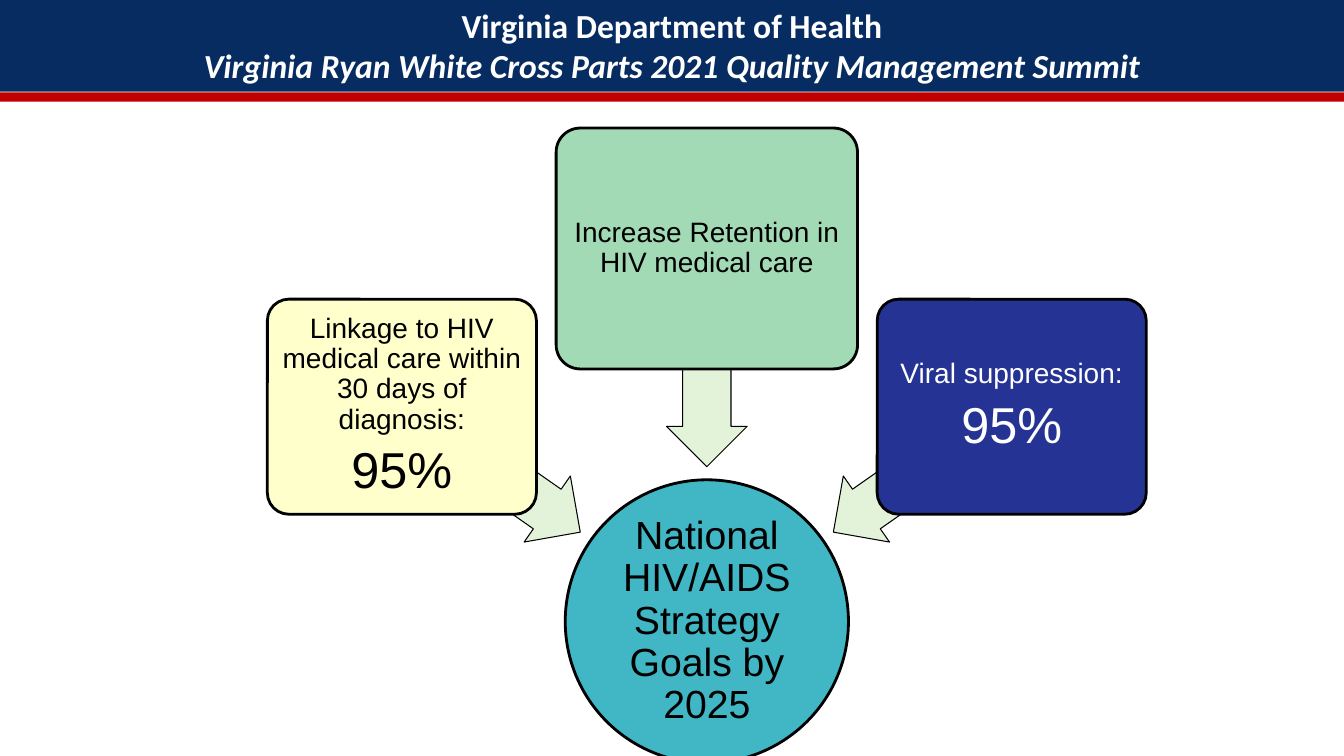
"""Build the slide on the national HIV/AIDS strategy goals."""
from dataclasses import dataclass

import lxml.etree
import pptx
import pptx.dml.color
import pptx.enum.shapes
import pptx.enum.text
import pptx.oxml.ns
import pptx.util

Pt = pptx.util.Pt
Kind = pptx.enum.shapes.MSO_SHAPE
Align = pptx.enum.text.PP_ALIGN
Anchor = pptx.enum.text.MSO_ANCHOR

COLORS = {
    "navy": "072C62", "red": "C00000", "teal": "41B6C4", "cream": "FFFFCC",
    "mint": "A1DAB4", "blue": "253494", "leaf": "C7E9B4",
    "black": "000000", "white": "FFFFFF",
}
SLIDE_WIDTH, SLIDE_HEIGHT = 960, 540
CENTER = 504.9
BOX_OFFSET, BOX_Y = 217.8, 290.5
ARROW_OFFSET, ARROW_Y = 154.1, 335.5
HEADER = ("Virginia Department of Health",
          "Virginia Ryan White Cross Parts 2021 Quality Management Summit")


@dataclass
class Line:
    """One paragraph of a label."""
    text: str
    size: float


@dataclass
class Node:
    """A filled shape with a label, placed by its center."""
    kind: Kind
    x: float
    y: float
    width: float
    height: float
    fill: str
    ink: str
    inset: float
    lines: list[Line]


@dataclass
class Arrow:
    """A rotated block arrow, placed by its center."""
    x: float
    y: float
    rotation: float


CIRCLE = Node(Kind.OVAL, CENTER, 443.9, 202.3, 202.3, "teal", "black", 1.5,
              [Line("National HIV/AIDS Strategy Goals by 2025", 28)])
GOALS = [
    (Arrow(CENTER - ARROW_OFFSET, ARROW_Y, 215),
     Node(Kind.ROUNDED_RECTANGLE, CENTER - BOX_OFFSET, BOX_Y, 192.2, 153.6,
          "cream", "black", 3,
          [Line("Linkage to HIV medical care within 30 days of diagnosis:", 20),
           Line("95%", 36)])),
    (Arrow(CENTER, 255.6, 270),
     Node(Kind.ROUNDED_RECTANGLE, CENTER, 177.5, 215.3, 172.1,
          "mint", "black", 3,
          [Line("Increase Retention in HIV medical care", 20)])),
    (Arrow(CENTER + ARROW_OFFSET, ARROW_Y, 325),
     Node(Kind.ROUNDED_RECTANGLE, CENTER + BOX_OFFSET, BOX_Y, 192.2, 153.6,
          "blue", "white", 3,
          [Line("Viral suppression:", 20), Line("95%", 36)])),
]


def color(name: str) -> pptx.dml.color.RGBColor:
    """Return a named color."""
    return pptx.dml.color.RGBColor.from_string(COLORS[name])


def add_block(page, kind, x, y, width, height, fill, line_width=0):
    """Add a filled shape around a center and return it."""
    block = page.shapes.add_shape(kind, Pt(x - width / 2), Pt(y - height / 2),
                                  Pt(width), Pt(height))
    block.shadow.inherit = False
    block.fill.solid()
    block.fill.fore_color.rgb = color(fill)
    if line_width:
        block.line.color.rgb = color("black")
        block.line.width = Pt(line_width)
    else:
        block.line.fill.background()
    return block


def add_node(page, node: Node) -> None:
    """Draw a node with its label."""
    box = add_block(page, node.kind, node.x, node.y, node.width, node.height,
                    node.fill, 2)
    if node.kind == Kind.ROUNDED_RECTANGLE:
        box.adjustments[0] = 0.1
    frame = box.text_frame
    frame.word_wrap = True
    frame.vertical_anchor = Anchor.MIDDLE
    frame.margin_left = frame.margin_right = Pt(node.inset)
    frame.margin_top = frame.margin_bottom = Pt(node.inset)
    for index, line in enumerate(node.lines):
        para = frame.add_paragraph() if index else frame.paragraphs[0]
        para.text = line.text
        para.alignment = Align.CENTER
        para.line_spacing = 0.9
        if index < len(node.lines) - 1:
            para.space_after = Pt(0.35 * line.size)
        para.font.name = "Arial"
        para.font.size = Pt(line.size)
        para.font.color.rgb = color(node.ink)


def add_arrow(page, arrow: Arrow) -> None:
    """Draw a half-transparent block arrow."""
    block = add_block(page, Kind.LEFT_ARROW, arrow.x, arrow.y, 155.5, 57.6,
                      "leaf", 0.75)
    block.rotation = arrow.rotation
    block.adjustments[0] = 0.6
    block.adjustments[1] = 0.5
    tint = block.fill._xPr.find(".//" + pptx.oxml.ns.qn("a:srgbClr"))
    lxml.etree.SubElement(tint, pptx.oxml.ns.qn("a:alpha"), val="50000")


def format_header(title) -> None:
    """Turn the title placeholder into the banner."""
    title.left, title.top = Pt(0), Pt(0)
    title.width, title.height = Pt(SLIDE_WIDTH), Pt(65.5)
    title.fill.solid()
    title.fill.fore_color.rgb = color("navy")
    frame = title.text_frame
    frame.text = "\n".join(HEADER)
    frame.auto_size = pptx.enum.text.MSO_AUTO_SIZE.NONE
    frame.word_wrap = True
    frame.vertical_anchor = Anchor.TOP
    for index, para in enumerate(frame.paragraphs):
        para.alignment = Align.CENTER
        para.space_before = Pt(0)
        para.font.name = "Calibri"
        para.font.size = Pt(24)
        para.font.bold = True
        para.font.italic = index == 1
        para.font.color.rgb = color("white")


def main() -> None:
    """Build and save the deck."""
    deck = pptx.Presentation()
    deck.slide_width, deck.slide_height = Pt(SLIDE_WIDTH), Pt(SLIDE_HEIGHT)
    page = deck.slides.add_slide(deck.slide_layouts.get_by_name("Title Only"))
    format_header(page.shapes.title)
    add_block(page, Kind.RECTANGLE, SLIDE_WIDTH / 2, 69.3, SLIDE_WIDTH, 6.5, "red")
    add_node(page, CIRCLE)
    for arrow, node in GOALS:
        add_arrow(page, arrow)
        add_node(page, node)
    deck.save("out.pptx")


if __name__ == "__main__":
    main()
